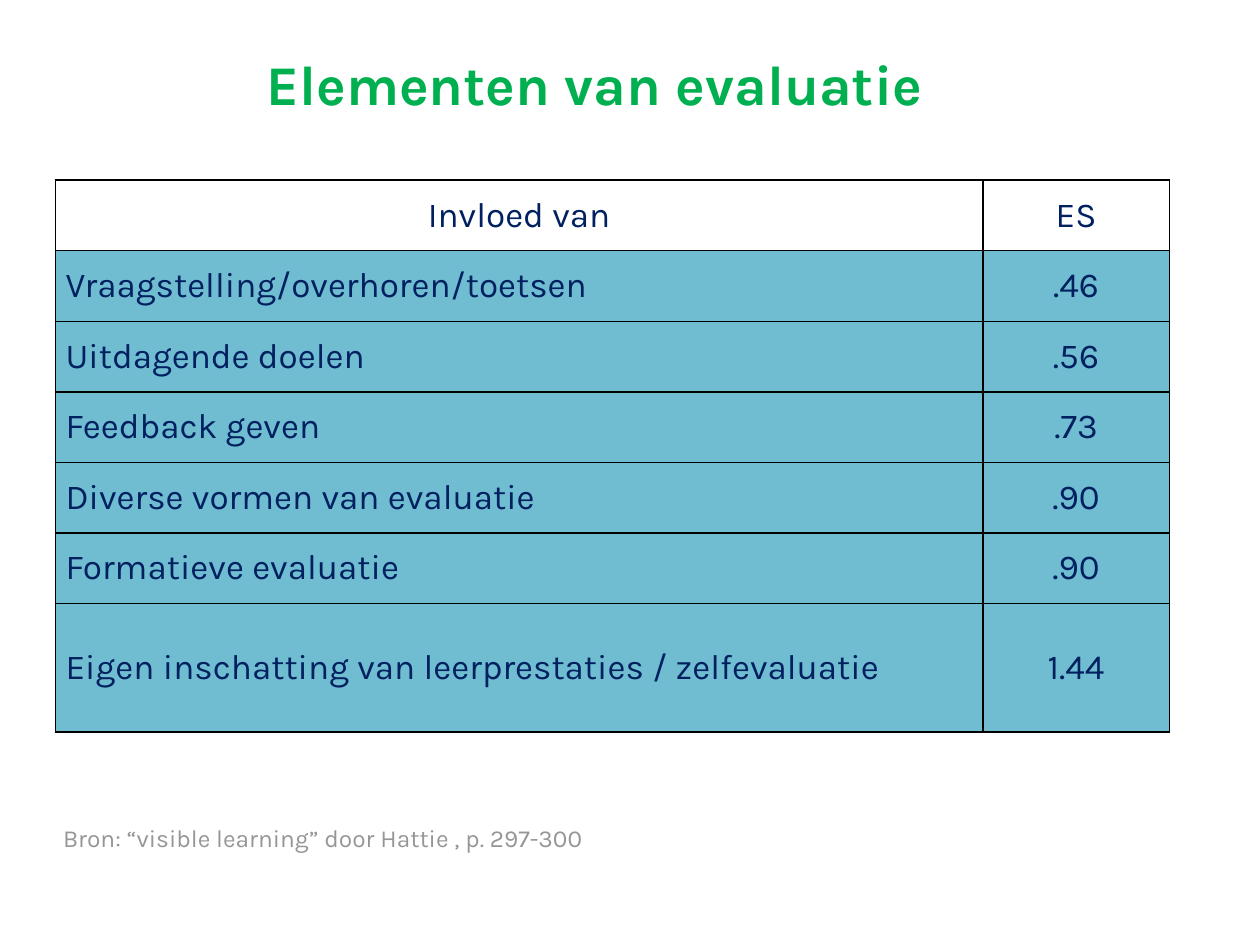
"""Build a slide with a table of effect sizes for elements of evaluation."""
from dataclasses import dataclass

from lxml import etree
from pptx import Presentation
from pptx import util as u
from pptx.dml import color
from pptx.enum import text
from pptx.oxml import ns


@dataclass(frozen=True)
class Theme:
    font: str = "Karla"
    green: str = "00B050"
    navy: str = "002060"
    grey: str = "969696"
    teal: str = "70BDD2"
    black: str = "000000"
    title_size: int = 32
    table_size: int = 20
    source_size: int = 14
    border: int = 1


theme = Theme()


def write(frame, words, size, ink, align, bold=False):
    frame.word_wrap = True
    paragraph = frame.paragraphs[0]
    paragraph.text = words
    paragraph.alignment = align
    paragraph.font.name = theme.font
    paragraph.font.size = u.Pt(size)
    paragraph.font.bold = bold
    paragraph.font.color.rgb = color.RGBColor.from_string(ink)


def add_label(left, top, width, height, anchor, *style):
    frame = slide.shapes.add_textbox(
        u.Inches(left), u.Inches(top), u.Inches(width), u.Inches(height)
    ).text_frame
    frame.margin_left = frame.margin_right = u.Inches(0.07)
    frame.margin_top = frame.margin_bottom = u.Inches(0.04)
    frame.vertical_anchor = anchor
    write(frame, *style)


prs = Presentation()
prs.slide_width, prs.slide_height = u.Inches(10), u.Inches(7.5)
slide = prs.slides.add_slide(prs.slide_layouts[6])
left_align, centre = text.PP_ALIGN.LEFT, text.PP_ALIGN.CENTER
top_anchor, middle = text.MSO_ANCHOR.TOP, text.MSO_ANCHOR.MIDDLE

add_label(1.6, 0.33, 6.24, 0.66, middle,
          "Elementen van evaluatie", theme.title_size, theme.green, centre, True)

influences = [
    ("Invloed van", "ES"),
    ("Vraagstelling/overhoren/toetsen", ".46"),
    ("Uitdagende doelen", ".56"),
    ("Feedback geven", ".73"),
    ("Diverse vormen van evaluatie", ".90"),
    ("Formatieve evaluatie", ".90"),
    ("Eigen inschatting van leerprestaties / zelfevaluatie", "1.44"),
]
effects = slide.shapes.add_table(
    len(influences), 2, u.Inches(0.44), u.Inches(1.43), u.Inches(8.84), u.Inches(4.4)
).table
effects.first_row = effects.horz_banding = False
for column, width in zip(effects.columns, (7.36, 1.48)):
    column.width = u.Inches(width)
for row in effects.rows:
    row.height = u.Inches(0.56)
effects.rows[len(influences) - 1].height = u.Inches(1.02)

for r, influence in enumerate(influences):
    for c, words in enumerate(influence):
        cell = effects.cell(r, c)
        cell.margin_left = cell.margin_right = u.Inches(0.08)
        cell.margin_top = cell.margin_bottom = u.Inches(0.04)
        cell.vertical_anchor = middle
        align = left_align if r and c == 0 else centre
        write(cell.text_frame, words, theme.table_size, theme.navy, align)
        properties = cell._tc.get_or_add_tcPr()
        for side in ("a:lnL", "a:lnR", "a:lnT", "a:lnB"):
            line = etree.SubElement(properties, ns.qn(side), w=str(u.Pt(theme.border)))
            paint = etree.SubElement(line, ns.qn("a:solidFill"))
            etree.SubElement(paint, ns.qn("a:srgbClr"), val=theme.black)
        if r:
            cell.fill.solid()
            cell.fill.fore_color.rgb = color.RGBColor.from_string(theme.teal)
        else:
            cell.fill.background()

add_label(0.43, 6.49, 5.91, 0.57, top_anchor,
          "Bron: “visible learning” door Hattie , p. 297-300",
          theme.source_size, theme.grey, left_align)

prs.save("out.pptx")
